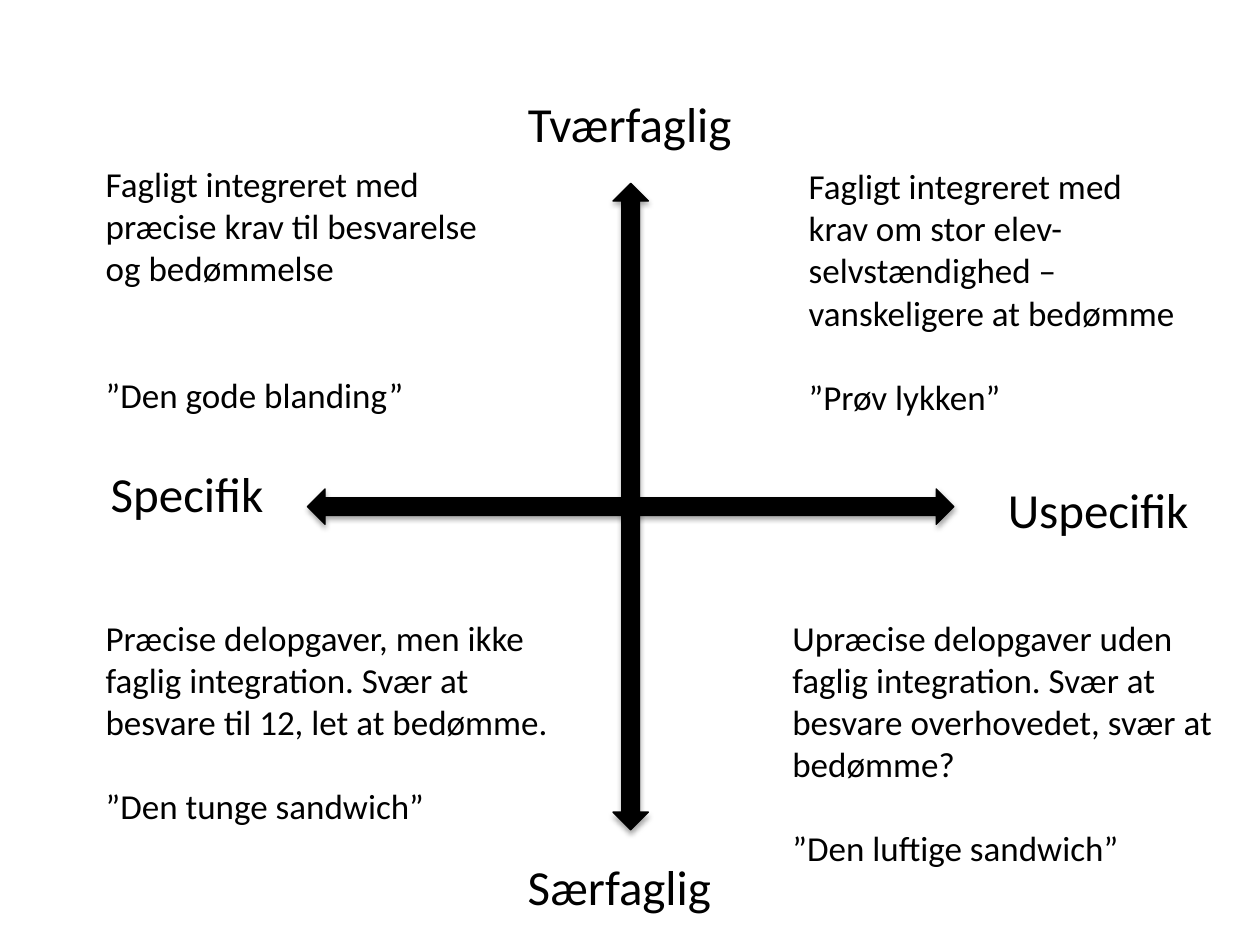
from pptx import Presentation
from pptx.dml.color import RGBColor
from pptx.enum.shapes import MSO_SHAPE
from pptx.enum.text import MSO_AUTO_SIZE
from pptx.util import Pt

COLORS = {"ink": "000000"}
FONT = "Calibri"
LINE = 24.4  # height of one 20 pt text line

# text, left, top, width, height
AXIS_LABELS = [
    ("Specifik", 56.2, 261.4, 115.2, 41),
    ("Uspecifik", 568.8, 270.7, 131, 41),
    ("Tværfaglig", 294.5, 49.7, 151.9, 41),
    ("Særfaglig", 294.5, 486, 136.8, 41),
]

# description, nickname, empty lines between them, left, top, width, height
QUADRANTS = [
    ("Fagligt integreret med præcise krav til besvarelse og bedømmelse",
     "”Den gode blanding”", 2, 53.3, 89.3, 236.9, 152.6),
    ("Fagligt integreret med krav om stor elev-selvstændighed – vanskeligere at bedømme",
     "”Prøv lykken”", 1, 455, 90.7, 229, 152.6),
    ("Præcise delopgaver, men ikke faglig integration. Svær at besvare til 12, let at bedømme.",
     "”Den tunge sandwich”", 1, 53.3, 348.5, 271.4, 128.2),
    ("Upræcise delopgaver uden faglig integration. Svær at besvare overhovedet, svær at bedømme?",
     "”Den luftige sandwich”", 1, 445.7, 348.5, 274.3, 152.6),
]

AXIS_BOX = (175.7, 279.4, 369.4, 20.2)
AXIS_ROTATIONS = (0, 90)


def add_text(slide, paragraphs, box, size, gap=0, wrap=True):
    """Add a text box with gap points of space before each later paragraph."""
    tf = slide.shapes.add_textbox(*map(Pt, box)).text_frame
    tf.word_wrap = wrap
    tf.auto_size = MSO_AUTO_SIZE.SHAPE_TO_FIT_TEXT
    for i, text in enumerate(paragraphs):
        p = tf.add_paragraph() if i else tf.paragraphs[0]
        if i:
            p.space_before = Pt(gap)
        r = p.add_run()
        r.text = text
        r.font.name = FONT
        r.font.size = Pt(size)
        r.font.color.rgb = RGBColor.from_string(COLORS["ink"])


def add_axis(slide, rotation):
    """Add a double arrow that keeps the soft shadow of the theme."""
    sp = slide.shapes.add_shape(MSO_SHAPE.LEFT_RIGHT_ARROW, *map(Pt, AXIS_BOX))
    sp.rotation = rotation
    ink = RGBColor.from_string(COLORS["ink"])
    sp.fill.solid()
    sp.fill.fore_color.rgb = ink
    sp.line.color.rgb = ink
    sp.line.width = Pt(0.75)


def main():
    prs = Presentation()
    prs.slide_width, prs.slide_height = Pt(720), Pt(540)
    slide = prs.slides.add_slide(prs.slide_layouts[6])
    for rotation in AXIS_ROTATIONS:
        add_axis(slide, rotation)
    for text, *box in AXIS_LABELS:
        add_text(slide, [text], box, size=28, wrap=False)
    for description, nickname, empty_lines, *box in QUADRANTS:
        add_text(slide, [description, nickname], box, size=20, gap=empty_lines * LINE)
    prs.save("out.pptx")


if __name__ == "__main__":
    main()
